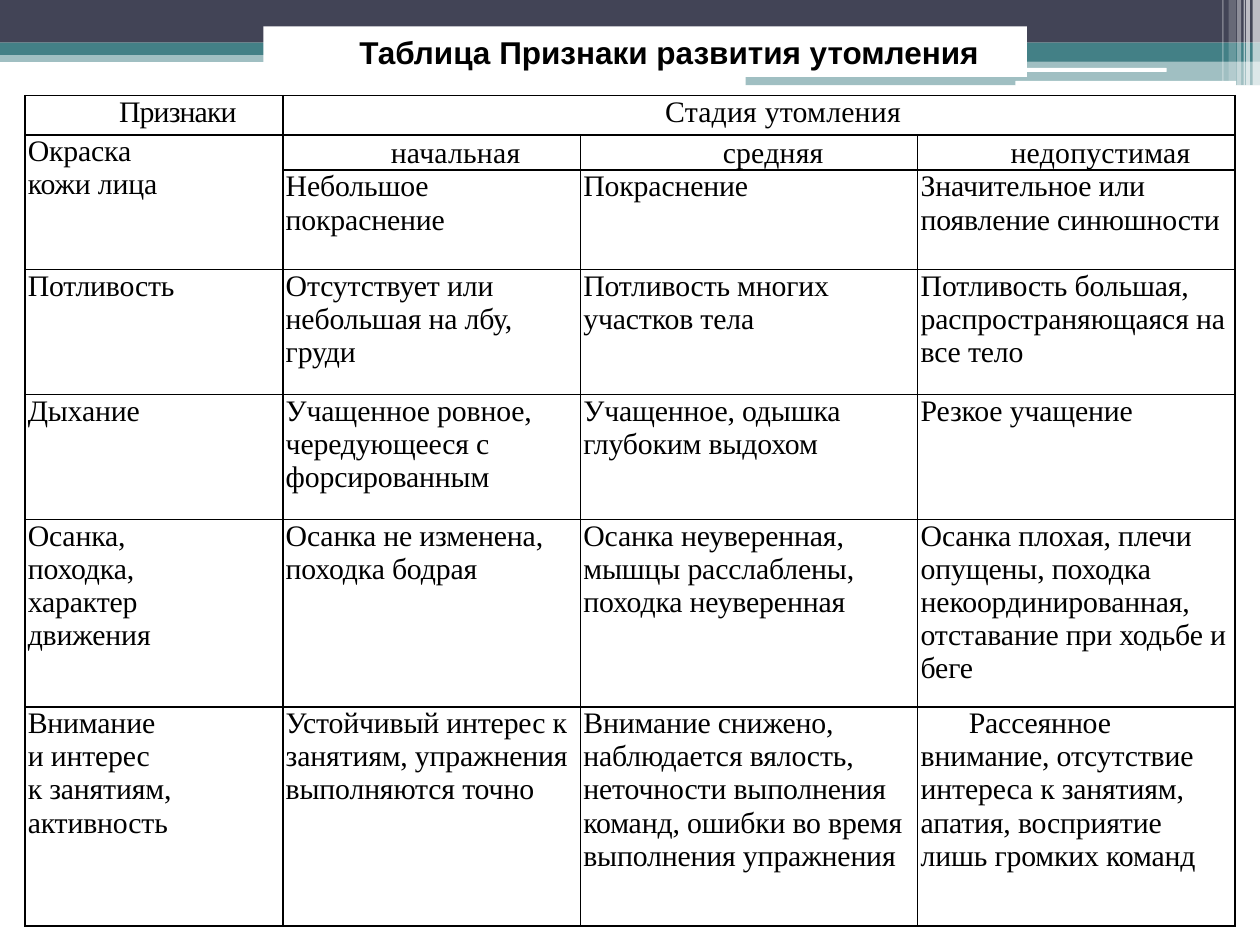
"""Builds a one-slide table of the signs of growing fatigue."""
from lxml import etree
from pptx import Presentation
from pptx import util as u
from pptx.dml.color import RGBColor
from pptx.enum import shapes, text
from pptx.oxml.ns import qn

THEME = {
    "dark": "424456", "teal": "438086", "white": "FFFFFF", "ink": "000000",
    "serif": "Times New Roman", "sans": "Arial",
    "body": 17, "head": 18, "line": 1,
}
TITLE = "Таблица Признаки развития утомления"
ROWS = [
    ["Признаки", "Стадия утомления", "", ""],
    ["Окраска\nкожи лица", "начальная", "средняя", "недопустимая"],
    ["", "Небольшое\nпокраснение", "Покраснение",
     "Значительное или появление синюшности"],
    ["Потливость", "Отсутствует или небольшая на лбу,\nгруди",
     "Потливость многих участков тела",
     "Потливость большая, распространяющаяся на все тело"],
    ["Дыхание", "Учащенное ровное, чередующееся с форсированным",
     "Учащенное, одышка глубоким выдохом", "Резкое учащение"],
    ["Осанка,\nпоходка,\nхарактер\nдвижения",
     "Осанка не изменена,\nпоходка бодрая",
     "Осанка неуверенная, мышцы расслаблены, походка неуверенная",
     "Осанка плохая, плечи опущены, походка некоординированная, "
     "отставание при ходьбе и беге"],
    ["Внимание\nи интерес\nк занятиям,\nактивность",
     "Устойчивый интерес к занятиям, упражнения выполняются точно",
     "Внимание снижено, наблюдается вялость, неточности выполнения команд, "
     "ошибки во время выполнения упражнения",
     "Рассеянное внимание, отсутствие интереса к занятиям, апатия, "
     "восприятие лишь громких команд"],
]
COLS = [5.2, 6, 6.8, 6.4]
HIGHS = [0.79, 0.71, 2, 2.52, 2.52, 3.78, 4.42]
MERGES = [((0, 1), (0, 3)), ((1, 0), (2, 0))]
SPACING = {(0, 0): -50, (0, 1): 10, (1, 1): 10, (1, 2): 10, (1, 3): 10}
INDENT = 0.97
BANDS = [
    (0, 1.02, 25.4, 0.23, "teal", 50),
    (0, 0, 25.4, 0.86, "dark", 100),
    (0, 0.86, 25.4, 0.25, "teal", 100),
    (15.03, 0.99, 10.37, 0.25, "teal", 100),
    (15.03, 1.22, 10.37, 0.5, "teal", 50),
]
PILLS = [(15.02, 1.37, 8.5, 0.08), (20.47, 1.63, 4.45, 0.1)]
STRIPES = [
    (25.25, 0.15, 1.73, 65), (25.12, 0.08, 1.73, 65), (25.07, 0.03, 1.73, 60),
    (24.94, 0.08, 1.73, 40), (24.77, 0.15, 1.63, 20), (24.64, 0.03, 1.63, 30),
]


def tint(name):
    return RGBColor.from_string(THEME[name])


def write(frame, words, font="serif", size="body", bold=False,
          center=False, indent=0, gap=0):
    frame.word_wrap = True
    frame.text = words
    for par in frame.paragraphs:
        par.alignment = text.PP_ALIGN.CENTER if center else text.PP_ALIGN.LEFT
        props = par._p.get_or_add_pPr()
        props.set("marL", "0")
        props.set("indent", str(u.Cm(indent)))
        for run in par.runs:
            run.font.name = THEME[font]
            run.font.size = u.Pt(THEME[size])
            run.font.bold = bold
            run.font.color.rgb = tint("ink")
            run._r.get_or_add_rPr().set("spc", str(gap))


def block(slide, box, fill, alpha=100, kind=shapes.MSO_SHAPE.RECTANGLE):
    item = slide.shapes.add_shape(kind, *map(u.Cm, box))
    item.shadow.inherit = False
    item.line.fill.background()
    item.fill.solid()
    item.fill.fore_color.rgb = tint(fill)
    if alpha < 100:
        color = item.element.spPr.find(".//" + qn("a:srgbClr"))
        etree.SubElement(color, qn("a:alpha"), val=str(alpha * 1000))


def border(cell):
    props = cell._tc.get_or_add_tcPr()
    for spot, side in enumerate(("lnL", "lnR", "lnT", "lnB")):
        line = etree.Element(qn("a:" + side), w=str(u.Pt(THEME["line"])))
        fill = etree.SubElement(line, qn("a:solidFill"))
        etree.SubElement(fill, qn("a:srgbClr"), val=THEME["ink"])
        props.insert(spot, line)


def decorate(slide):
    for *box, fill, alpha in BANDS:
        block(slide, box, fill, alpha)
    for box in PILLS:
        block(slide, box, "white", kind=shapes.MSO_SHAPE.ROUNDED_RECTANGLE)
    for left, width, high, alpha in STRIPES:
        block(slide, (left, 0, width, high), "white", alpha)


def fill_table(slide):
    box = (0.5, 1.93, sum(COLS), sum(HIGHS))
    table = slide.shapes.add_table(
        len(ROWS), len(COLS), *map(u.Cm, box)).table
    table.first_row = table.horz_banding = False
    for col, width in zip(table.columns, COLS):
        col.width = u.Cm(width)
    for row, high in zip(table.rows, HIGHS):
        row.height = u.Cm(high)
    for start, end in MERGES:
        table.cell(*start).merge(table.cell(*end))
    last = (len(ROWS) - 1, len(COLS) - 1)
    for r, row in enumerate(ROWS):
        for c, words in enumerate(row):
            cell = table.cell(r, c)
            cell.margin_left = cell.margin_right = u.Cm(0.06)
            cell.margin_top = cell.margin_bottom = 0
            stage = r == 1 and c > 0
            cell.vertical_anchor = (text.MSO_ANCHOR.BOTTOM if stage
                                    else text.MSO_ANCHOR.TOP)
            cell.fill.solid()
            cell.fill.fore_color.rgb = tint("white")
            border(cell)
            head = r == 0 or stage
            write(cell.text_frame, words, center=head,
                  indent=INDENT if head or (r, c) == last else 0,
                  gap=SPACING.get((r, c), -10))


def add_title(slide):
    title = slide.shapes.title
    title.left, title.top, title.width, title.height = map(
        u.Cm, (5.31, 0.53, 15.39, 1.02))
    title.fill.solid()
    title.fill.fore_color.rgb = tint("white")
    frame = title.text_frame
    frame.auto_size = text.MSO_AUTO_SIZE.NONE
    frame.vertical_anchor = text.MSO_ANCHOR.MIDDLE
    write(frame, TITLE, font="sans", size="head", bold=True,
          center=True, indent=INDENT)
    slide.shapes.element.append(title.element)


def main():
    deck = Presentation()
    deck.slide_width, deck.slide_height = u.Cm(25.4), u.Cm(19.05)
    slide = deck.slides.add_slide(deck.slide_layouts[5])
    decorate(slide)
    fill_table(slide)
    add_title(slide)
    deck.save("out.pptx")


if __name__ == "__main__":
    main()
